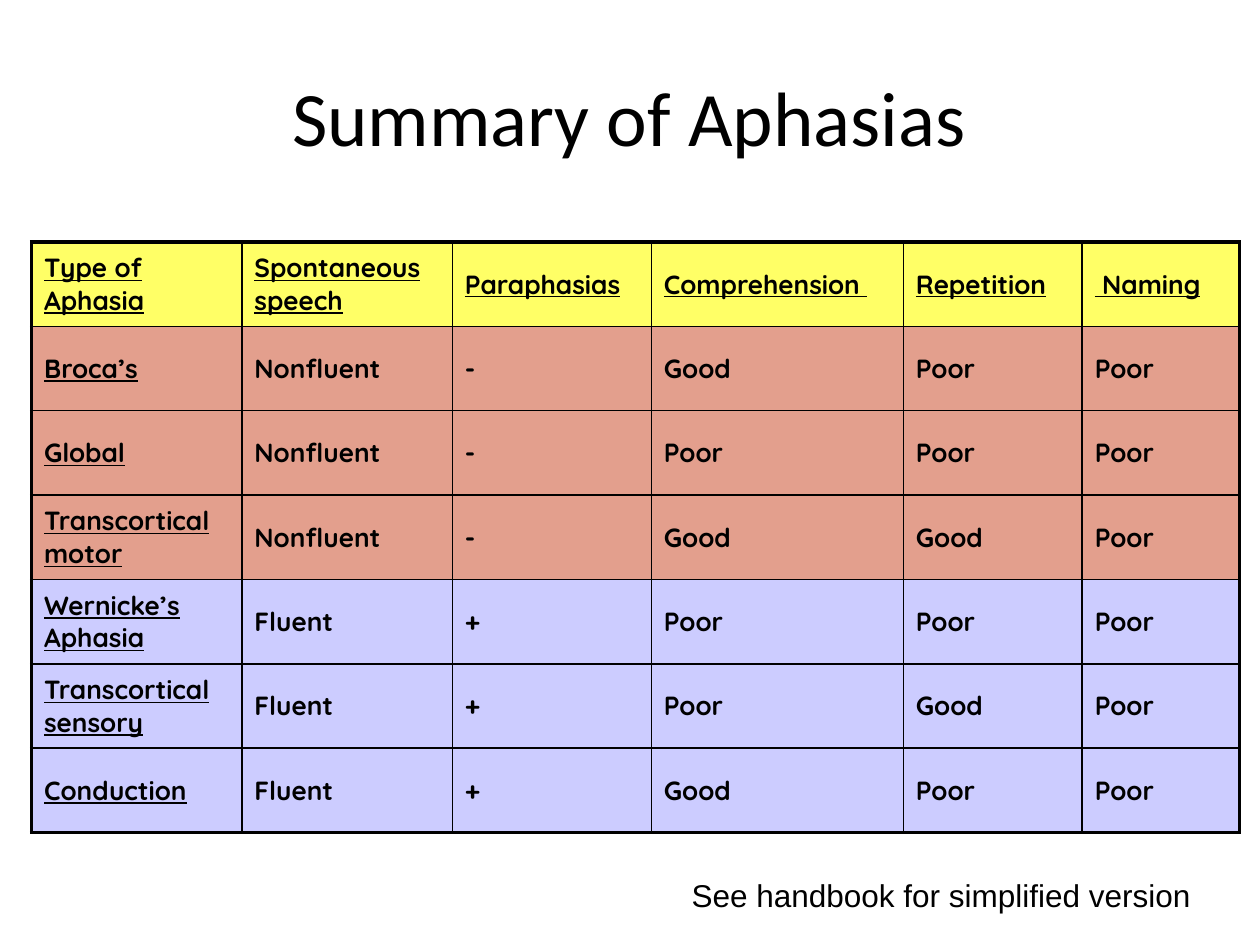
import pptx
import pptx.dml.color
import pptx.enum.text
import pptx.oxml
import pptx.oxml.ns
import pptx.util

Inches = pptx.util.Inches
Pt = pptx.util.Pt
RGBColor = pptx.dml.color.RGBColor
ANCHOR = pptx.enum.text.MSO_ANCHOR
ALIGN = pptx.enum.text.PP_ALIGN

BLACK = RGBColor(0x00, 0x00, 0x00)
YELLOW = RGBColor(0xFF, 0xFF, 0x66)
SALMON = RGBColor(0xE3, 0x9F, 0x8D)
LAVENDER = RGBColor(0xCC, 0xCC, 0xFF)

TITLE_FONT = {"name": "Calibri", "size": Pt(44)}
NOTE_FONT = {"name": "Arial", "size": Pt(18)}
CELL_FONT = {"name": "Quicksand", "size": Pt(15), "bold": True}

COLUMN_WIDTHS = [1.67, 1.67, 1.58, 2, 1.42, 1.25]
ROW_HEIGHT = 0.67
INNER_LINE = 1
OUTER_LINE = 2.25
APHASIAS = [
    ["Type of Aphasia", "Spontaneous speech", "Paraphasias",
     "Comprehension ", "Repetition", " Naming"],
    ["Broca’s", "Nonfluent", "-", "Good", "Poor", "Poor"],
    ["Global", "Nonfluent", "-", "Poor", "Poor", "Poor"],
    ["Transcortical motor", "Nonfluent", "-", "Good", "Good", "Poor"],
    ["Wernicke’s Aphasia", "Fluent", "+", "Poor", "Poor", "Poor"],
    ["Transcortical sensory", "Fluent", "+", "Poor", "Good", "Poor"],
    ["Conduction", "Fluent", "+", "Good", "Poor", "Poor"],
]
ROW_FILLS = [YELLOW] + [SALMON] * 3 + [LAVENDER] * 3


def write_text(tf, text, font, **paragraph_format):
    p = tf.paragraphs[0]
    for name, value in paragraph_format.items():
        setattr(p, name, value)
    r = p.add_run()
    r.text = text
    for name, value in font.items():
        setattr(r.font, name, value)
    r.font.color.rgb = BLACK


def add_text(s, box, text, font, anchor, align):
    sp = s.shapes.add_textbox(*map(Inches, box))
    tf = sp.text_frame
    tf.word_wrap = True
    tf.vertical_anchor = anchor
    write_text(tf, text, font, alignment=align)


def set_borders(cell, widths):
    tc_pr = cell._tc.get_or_add_tcPr()
    for i, (side, width) in enumerate(widths.items()):
        line = pptx.oxml.parse_xml(
            f'<a:ln{side} {pptx.oxml.ns.nsdecls("a")} w="{Pt(width)}">'
            f'<a:solidFill><a:srgbClr val="{BLACK}"/></a:solidFill></a:ln{side}>'
        )
        tc_pr.insert(i, line)


def fill_cell(cell, text, color, underline, widths):
    cell.vertical_anchor = ANCHOR.MIDDLE
    cell.fill.solid()
    cell.fill.fore_color.rgb = color
    write_text(cell.text_frame, text, {**CELL_FONT, "underline": underline},
               space_before=Pt(3))
    set_borders(cell, widths)


def line_width(on_edge):
    return OUTER_LINE if on_edge else INNER_LINE


def add_aphasia_table(s, left, top):
    n_rows, n_cols = len(APHASIAS), len(COLUMN_WIDTHS)
    frame = s.shapes.add_table(
        n_rows, n_cols, Inches(left), Inches(top),
        Inches(sum(COLUMN_WIDTHS)), Inches(n_rows * ROW_HEIGHT))
    table = frame.table
    table.first_row = table.horz_banding = False
    for column, width in zip(table.columns, COLUMN_WIDTHS):
        column.width = Inches(width)
    for i, (row, color) in enumerate(zip(APHASIAS, ROW_FILLS)):
        table.rows[i].height = Inches(ROW_HEIGHT)
        for j, text in enumerate(row):
            widths = {
                "L": line_width(j == 0),
                "R": line_width(j == n_cols - 1),
                "T": line_width(i == 0),
                "B": line_width(i == n_rows - 1),
            }
            fill_cell(table.cell(i, j), text, color, i == 0 or j == 0, widths)


def main():
    prs = pptx.Presentation()
    prs.slide_width, prs.slide_height = Inches(10), Inches(7.5)
    s = prs.slides.add_slide(prs.slide_layouts[6])
    add_text(s, (0.33, 0.25, 9.33, 1.33), "Summary of Aphasias",
             TITLE_FONT, ANCHOR.MIDDLE, ALIGN.CENTER)
    add_aphasia_table(s, 0.25, 1.92)
    add_text(s, (5.39, 6.9, 4.25, 0.4), "See handbook for simplified version",
             NOTE_FONT, ANCHOR.TOP, ALIGN.LEFT)
    prs.save("out.pptx")


if __name__ == "__main__":
    main()
